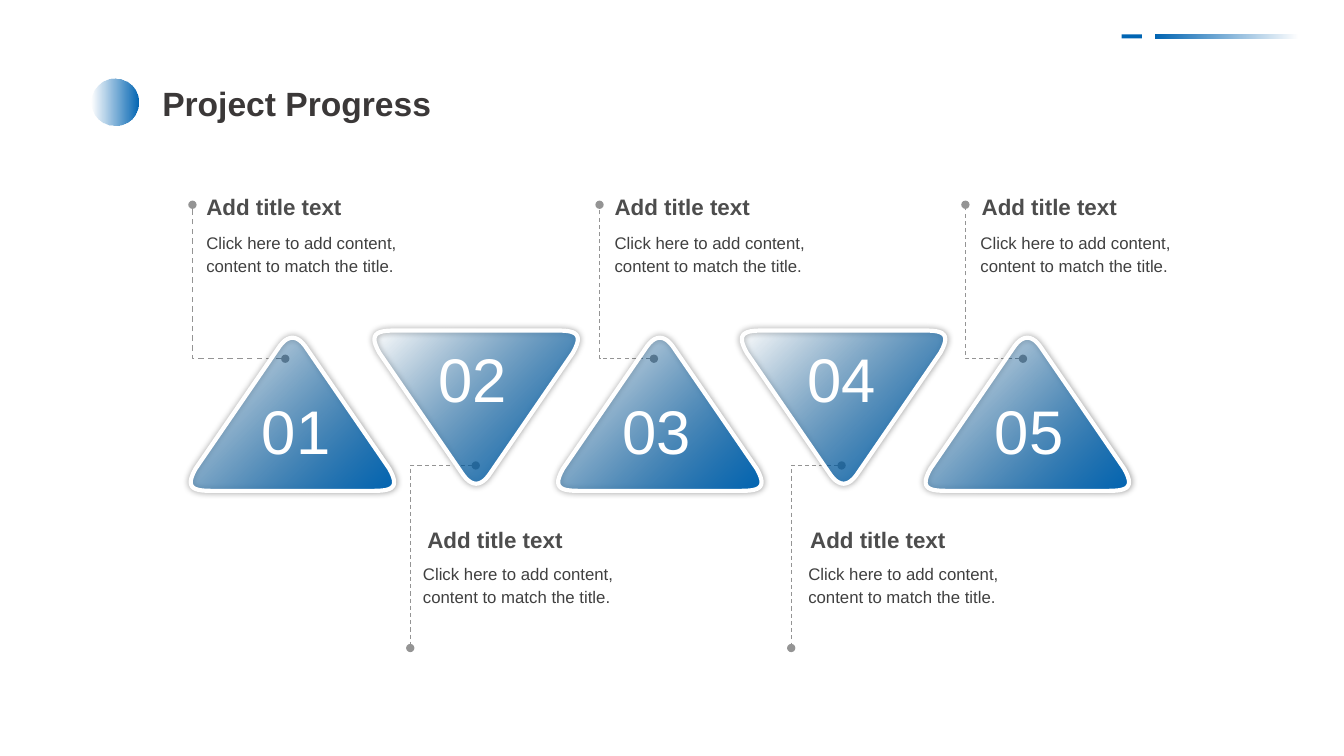
from pptx import Presentation
from pptx.dml.color import RGBColor
from pptx.enum.dml import MSO_LINE
from pptx.enum.shapes import MSO_SHAPE
from pptx.enum.text import MSO_AUTO_SIZE
from pptx.oxml.ns import qn
from pptx.util import Cm, Pt
from lxml.etree import SubElement

BLUE, GREY, WHITE = "0065B3", "949494", "FFFFFF"
HEAD = "Project Progress"
NAME = "Add title text"
BODY = "Click here to add content, content to match the title."

# number, its left, title left, body left, body width, dot on triangle, far end, line width
STEPS = [
    ("01", 6.35, 4.95, 4.95, 5.97, 7.19, 4.85, 1),
    ("02", 10.8, 10.52, 10.41, 5.97, 11.99, 10.34, 0.75),
    ("03", 15.44, 15.24, 15.24, 5.97, 16.48, 15.11, 0.75),
    ("04", 20.09, 20.17, 20.12, 5.97, 21.21, 19.94, 0.75),
    ("05", 24.82, 24.49, 24.46, 6.38, 25.78, 24.33, 0.75),
]
# heights of number, title, body, dot, far end
UP = (9.78, 4.75, 5.66, 9.04, 5.16)
DOWN = (8.46, 13.13, 14.02, 11.73, 16.33)
FIRST, PITCH = 7.37, 4.63
TOP, BASE = 8.51, 12.19

# right half of the triangle, from its axis and its tip
TIP = (0.38, 0.3)
TIP_PULL = (0.13, -0.1)
CORNER = [(2.44, 3.3), (2.7, 3.76), (2.54, 3.86), (2.06, 3.86)]

deck = Presentation()
deck.slide_width, deck.slide_height = Cm(33.87), Cm(19.05)
slide = deck.slides.add_slide(deck.slide_layouts[6])
shapes = slide.shapes


def paint(code):
    return RGBColor.from_string(code)


def fade(shape, angle, clear):
    """Fill with a blue gradient whose stop number `clear` is transparent."""
    shape.fill.gradient()
    shape.fill.gradient_angle = -angle % 360
    for stop in shape.fill.gradient_stops:
        stop.color.rgb = paint(BLUE)
    tones = list(shape.element.spPr.iter(qn("a:srgbClr")))
    SubElement(tones[clear], qn("a:alpha"), val="0")


def write(text, left, top, width, height, size, code, bold=False, wrap=False):
    box = shapes.add_textbox(Cm(left), Cm(top), Cm(width), Cm(height))
    frame = box.text_frame
    frame.text = text
    frame.word_wrap = wrap
    frame.auto_size = MSO_AUTO_SIZE.SHAPE_TO_FIT_TEXT
    font = frame.paragraphs[0].runs[0].font
    font.name, font.size, font.bold = "Arial", Pt(size), bold
    font.color.rgb = paint(code)
    return frame.paragraphs[0]


def trace(points, close):
    spots = [(Cm(x), Cm(y)) for x, y in points]
    pen = shapes.build_freeform(*spots[0])
    pen.add_line_segments(spots[1:], close=close)
    shape = pen.convert_to_shape()
    shape.shadow.inherit = False
    return shape


def plain(kind, left, top, width, height):
    shape = shapes.add_shape(kind, Cm(left), Cm(top), Cm(width), Cm(height))
    shape.shadow.inherit = False
    shape.line.fill.background()
    return shape


def bend(ends, steps=12):
    """Points along a cubic curve."""
    def at(t, axis):
        a, b, c, d = (end[axis] for end in ends)
        s = 1 - t
        return s**3 * a + 3 * s * s * t * b + 3 * s * t * t * c + t**3 * d
    return [(at(n / steps, 0), at(n / steps, 1)) for n in range(steps + 1)]


def flip(points):
    return [(-x, y) for x, y in points]


def draw_link(dot, bend_x, dot_y, end_y, width):
    link = trace([(dot, dot_y), (bend_x, dot_y), (bend_x, end_y)], False)
    link.fill.background()
    link.line.color.rgb = paint(GREY)
    link.line.width = Pt(width)
    link.line.dash_style = MSO_LINE.DASH
    stroke = link.element.spPr.find(qn("a:ln"))
    for end in ("a:headEnd", "a:tailEnd"):
        SubElement(stroke, qn(end), type="oval")


def draw_peak(mid, down):
    side = bend(CORNER)
    crown = bend(flip([TIP, TIP_PULL]) + [TIP_PULL, TIP])
    outline = crown + side + flip(side)[::-1]
    peak = trace([(mid + x, BASE - y if down else TOP + y) for x, y in outline], True)
    fade(peak, 45, 0)
    peak.line.color.rgb = paint(WHITE)
    peak.line.width = Pt(3)
    effects = peak.element.spPr.find(qn("a:effectLst"))
    shade = SubElement(effects, qn("a:outerShdw"), blurRad=str(Pt(5)), dist="0",
                       algn="ctr", rotWithShape="0")
    tone = SubElement(shade, qn("a:srgbClr"), val="000000")
    SubElement(tone, qn("a:alpha"), val="40000")


write(HEAD, 3.84, 1.96, 7.9, 1.27, 24, "3B3838", bold=True, wrap=True)
fade(plain(MSO_SHAPE.RECTANGLE, 29.13, 0.87, 3.58, 0.11), 0, 1)
dash = plain(MSO_SHAPE.RECTANGLE, 28.27, 0.87, 0.51, 0.1)
dash.fill.solid()
dash.fill.fore_color.rgb = paint(BLUE)
fade(plain(MSO_SHAPE.OVAL, 2.3, 1.97, 1.2, 1.2), 0, 0)

for i, (num, num_x, name_x, body_x, body_w, dot, end, width) in enumerate(STEPS):
    down = i % 2 == 1
    num_y, name_y, body_y, dot_y, end_y = DOWN if down else UP
    draw_link(dot, end, dot_y, end_y, width)
    draw_peak(FIRST + i * PITCH, down)
    write(num, num_x, num_y, 2.34, 2.13, 44, WHITE)
    write(NAME, name_x, name_y, 3.96, 0.94, 16, "4D4D4D", bold=True)
    body = write(BODY, body_x, body_y, body_w, 1.37, 12, "404040", wrap=True)
    body.line_spacing = 1.14

deck.save("out.pptx")
